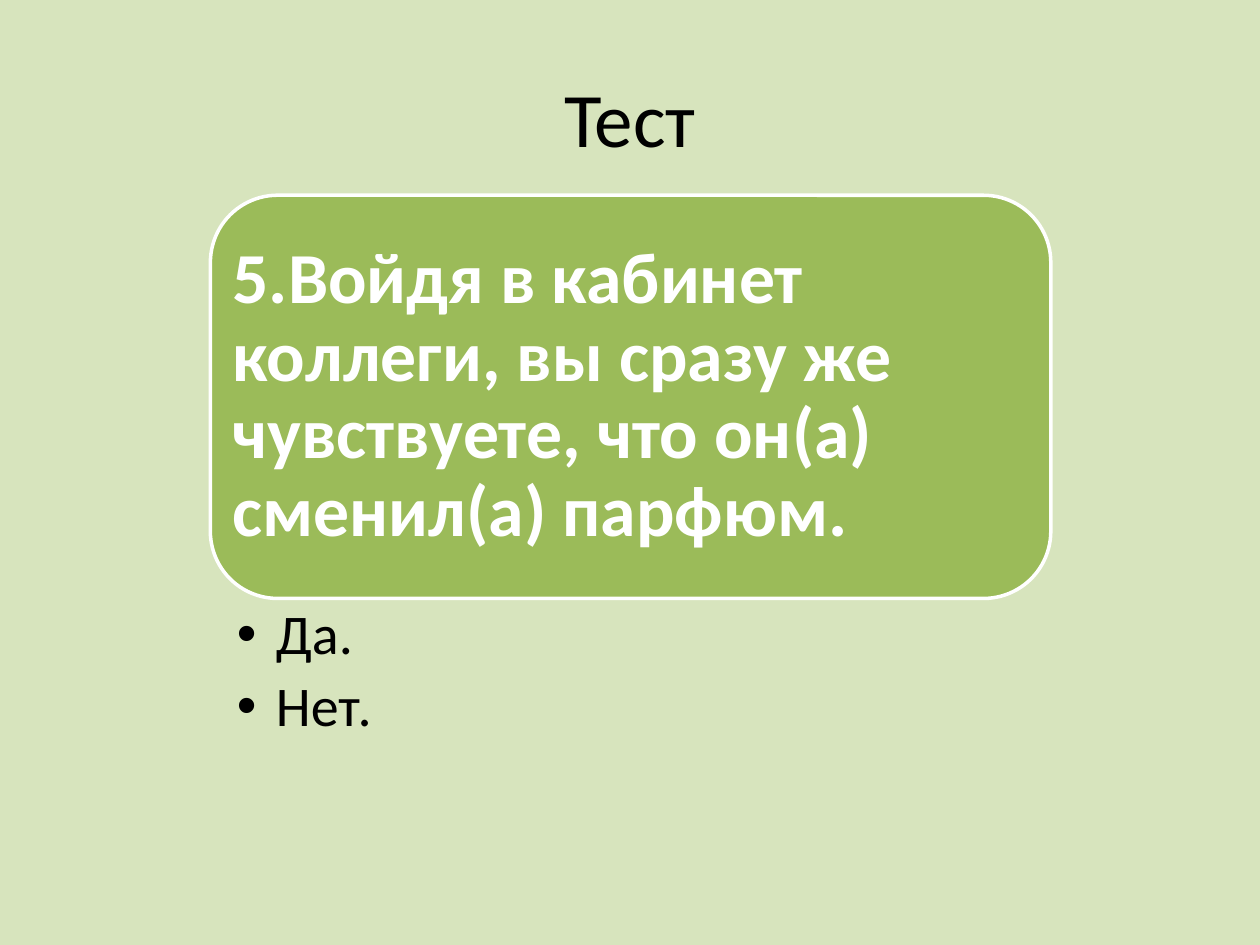
from dataclasses import dataclass

from lxml.etree import SubElement
from pptx import Presentation
from pptx.dml.color import RGBColor
from pptx.enum.shapes import MSO_SHAPE
from pptx.enum.text import MSO_ANCHOR, PP_ALIGN
from pptx.oxml.ns import qn
from pptx.util import Inches, Pt

COLORS = {"background": "D7E4BD", "card": "9BBB59", "light": "FFFFFF", "dark": "000000"}
QUESTION = "5.Войдя в кабинет коллеги, вы сразу же чувствуете, что он(а) сменил(а) парфюм."
ANSWERS = ["Да.", "Нет."]


@dataclass
class Area:
    left: float
    top: float
    width: float
    height: float

    def lengths(self) -> list:
        return [Inches(n) for n in (self.left, self.top, self.width, self.height)]


TITLE_AREA = Area(0.5, 0.3, 9, 1.25)
CARD_AREA = Area(1.67, 1.55, 6.67, 3.2)
ANSWER_AREA = Area(1.67, CARD_AREA.top + CARD_AREA.height, 6.67, 1.21)


def color(name: str) -> RGBColor:
    return RGBColor.from_string(COLORS[name])


def set_font(para, size: float, name: str, bold: bool = False) -> None:
    para.font.name = "Calibri"
    para.font.size = Pt(size)
    para.font.bold = bold
    para.font.color.rgb = color(name)


def set_frame(frame, anchor, left: float, top: float, right: float, bottom: float) -> None:
    """Wrap the text, anchor it and set its margins in inches."""
    frame.word_wrap = True
    frame.vertical_anchor = anchor
    frame.margin_left, frame.margin_top = Inches(left), Inches(top)
    frame.margin_right, frame.margin_bottom = Inches(right), Inches(bottom)


def add_bullet(para, indent: float) -> None:
    properties = para._p.get_or_add_pPr()
    properties.set("marL", str(Inches(indent)))
    properties.set("indent", str(-Inches(indent)))
    SubElement(properties, qn("a:buFont"), typeface="Arial")
    SubElement(properties, qn("a:buChar"), char="•")


def add_title(page) -> None:
    title = page.shapes.title
    title.left, title.top, title.width, title.height = TITLE_AREA.lengths()
    title.text_frame.text = "Тест"
    title.text_frame.vertical_anchor = MSO_ANCHOR.MIDDLE
    para = title.text_frame.paragraphs[0]
    para.alignment = PP_ALIGN.CENTER
    set_font(para, 44, "dark")


def add_question(page) -> None:
    card = page.shapes.add_shape(MSO_SHAPE.ROUNDED_RECTANGLE, *CARD_AREA.lengths())
    card.shadow.inherit = False
    card.fill.solid()
    card.fill.fore_color.rgb = color("card")
    card.line.color.rgb = color("light")
    card.line.width = Pt(2)
    # The rounded corners already push the text inwards.
    set_frame(card.text_frame, MSO_ANCHOR.MIDDLE, 0.02, 0.02, 0.02, 0.02)
    para = card.text_frame.paragraphs[0]
    para.text = QUESTION
    para.alignment = PP_ALIGN.LEFT
    para.line_spacing = 0.9
    set_font(para, 41, "light", bold=True)


def add_answers(page) -> None:
    box = page.shapes.add_textbox(*ANSWER_AREA.lengths())
    set_frame(box.text_frame, MSO_ANCHOR.TOP, 0.21, 0.06, 0.32, 0.06)
    box.text_frame.text = "\n".join(ANSWERS)
    for para in box.text_frame.paragraphs:
        para.level = 1
        para.line_spacing = 0.9
        para.space_after = Pt(6.4)
        add_bullet(para, 0.31)
        set_font(para, 32, "dark")


def main() -> None:
    deck = Presentation()
    deck.slide_width, deck.slide_height = Inches(10), Inches(7.5)
    page = deck.slides.add_slide(deck.slide_layouts[5])
    page.background.fill.solid()
    page.background.fill.fore_color.rgb = color("background")
    add_title(page)
    add_question(page)
    add_answers(page)
    deck.save("out.pptx")


if __name__ == "__main__":
    main()
